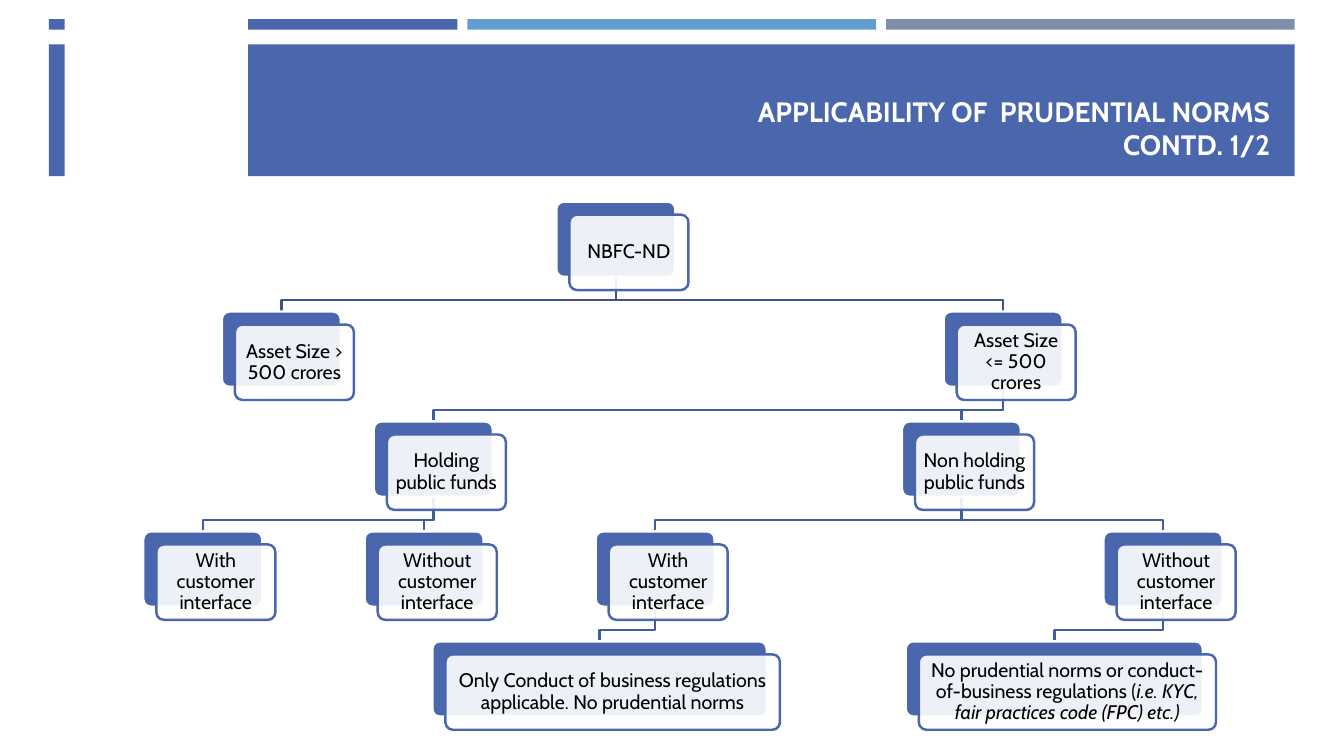
from dataclasses import dataclass

from lxml import etree
from pptx import Presentation
from pptx import util as u
from pptx.dml.color import RGBColor
from pptx.enum import shapes, text
from pptx.oxml.ns import qn

FONT = "Cabin"
BLUE, SKY, GREY, WHITE, BLACK = "4A66AC", "629DD1", "7F8FA9", "FFFFFF", "000000"
ROOT_LINK, LINK = "3B528A", "435D9C"
LINE_WIDTH = u.Pt(1.75)
CARD_W, CARD_H, ROW_PITCH, CARD_OFFSET, ELBOW = 3.0, 1.9, 2.77, 0.33, 0.58


@dataclass
class Node:
    parent: str
    centre: float
    row: int
    label: str
    italic: str = ""
    width: float = CARD_W


NODES = {
    "root": Node("", 15.52, 0, "NBFC-ND"),
    "large": Node("root", 7.09, 1, "Asset Size > 500 crores"),
    "small": Node("root", 25.28, 1, "Asset Size <= 500 crores"),
    "holding": Node("small", 10.92, 2, "Holding public funds"),
    "holding_with": Node("holding", 5.11, 3, "With customer interface"),
    "holding_without": Node("holding", 10.69, 3, "Without customer interface"),
    "non_holding": Node("small", 24.23, 2, "Non holding public funds"),
    "non_with": Node("non_holding", 16.51, 3, "With customer interface"),
    "conduct_only": Node("non_with", 15.11, 4,
                         "Only Conduct of business regulations applicable. "
                         "No prudential norms", width=8.43),
    "non_without": Node("non_holding", 29.31, 3, "Without customer interface"),
    "no_norms": Node("non_without", 26.57, 4,
                     "No prudential norms or conduct-of-business regulations (",
                     "i.e. KYC, fair practices code (FPC) etc.)", 7.49),
}


def rgb(value):
    return RGBColor.from_string(value)


def add_box(s, kind, x, y, w, h, fill, line=None):
    sp = s.shapes.add_shape(kind, u.Cm(x), u.Cm(y), u.Cm(w), u.Cm(h))
    sp.shadow.inherit = False
    sp.fill.solid()
    sp.fill.fore_color.rgb = rgb(fill)
    if line:
        sp.line.color.rgb = rgb(line)
        sp.line.width = LINE_WIDTH
    else:
        sp.line.fill.background()
    return sp


def set_font(p, size, color, bold=False):
    p.font.name = FONT
    p.font.size = u.Pt(size)
    p.font.bold = bold
    p.font.color.rgb = rgb(color)


def add_header(s, x, y, w):
    rect = shapes.MSO_SHAPE.RECTANGLE
    gap = 0.25
    bar_w = (w - 2 * gap) / 3
    for i, color in enumerate((BLUE, SKY, GREY)):
        add_box(s, rect, x + i * (bar_w + gap), y, bar_w, 0.27, color)
    add_box(s, rect, x, y + 0.64, w, 3.32, BLUE)
    add_box(s, rect, x + 0.4, 0, 4.62, 4.85, WHITE)

    sp = s.shapes.add_textbox(u.Cm(x + 13.07), u.Cm(y + 0.89), u.Cm(17.96), u.Cm(2.82))
    tf = sp.text_frame
    tf.word_wrap = True
    tf.vertical_anchor = text.MSO_ANCHOR.BOTTOM
    p = tf.paragraphs[0]
    p.text = "APPLICABILITY OF  PRUDENTIAL NORMS\vCONTD. 1/2"
    p.alignment = text.PP_ALIGN.RIGHT
    set_font(p, 20, WHITE, True)


def add_link(s, parent, child, top):
    start_y = top + parent.row * ROW_PITCH + CARD_H
    end_y = top + child.row * ROW_PITCH
    points = [(parent.centre, start_y + ELBOW), (child.centre, start_y + ELBOW),
              (child.centre, end_y)]
    builder = s.shapes.build_freeform(u.Cm(parent.centre), u.Cm(start_y))
    builder.add_line_segments([(u.Cm(x), u.Cm(y)) for x, y in points], close=False)
    sp = builder.convert_to_shape()
    sp.shadow.inherit = False
    sp.fill.background()
    sp.line.color.rgb = rgb(LINK if parent.row else ROOT_LINK)
    sp.line.width = LINE_WIDTH


def add_card(s, node, top):
    rounded = shapes.MSO_SHAPE.ROUNDED_RECTANGLE
    x, y = node.centre - node.width / 2, top + node.row * ROW_PITCH
    back = add_box(s, rounded, x, y, node.width, CARD_H, BLUE, WHITE)
    front = add_box(s, rounded, x + CARD_OFFSET, y + CARD_OFFSET,
                    node.width, CARD_H, WHITE, BLUE)
    for sp in (back, front):
        sp.adjustments[0] = 0.1
    color = front.fill._xPr.find(qn("a:solidFill"))[0]
    etree.SubElement(color, qn("a:alpha"), val="90000")

    tf = front.text_frame
    tf.word_wrap = True
    tf.vertical_anchor = text.MSO_ANCHOR.MIDDLE
    tf.margin_left = tf.margin_right = tf.margin_top = tf.margin_bottom = u.Cm(0.15)
    p = tf.paragraphs[0]
    p.alignment = text.PP_ALIGN.CENTER
    p.line_spacing = 0.9
    set_font(p, 14, BLACK)
    p.add_run().text = node.label
    if node.italic:
        r = p.add_run()
        r.text = node.italic
        r.font.italic = True


def add_tree(s, top):
    for node in NODES.values():
        if node.parent:
            add_link(s, NODES[node.parent], node, top)
    for node in NODES.values():
        add_card(s, node, top)


def main():
    prs = Presentation()
    prs.slide_width, prs.slide_height = u.Cm(33.87), u.Cm(19.05)
    s = prs.slides.add_slide(prs.slide_layouts[6])
    add_header(s, 1.23, 0.48, 31.4)
    add_tree(s, 5.08)
    prs.save("out.pptx")


if __name__ == "__main__":
    main()
